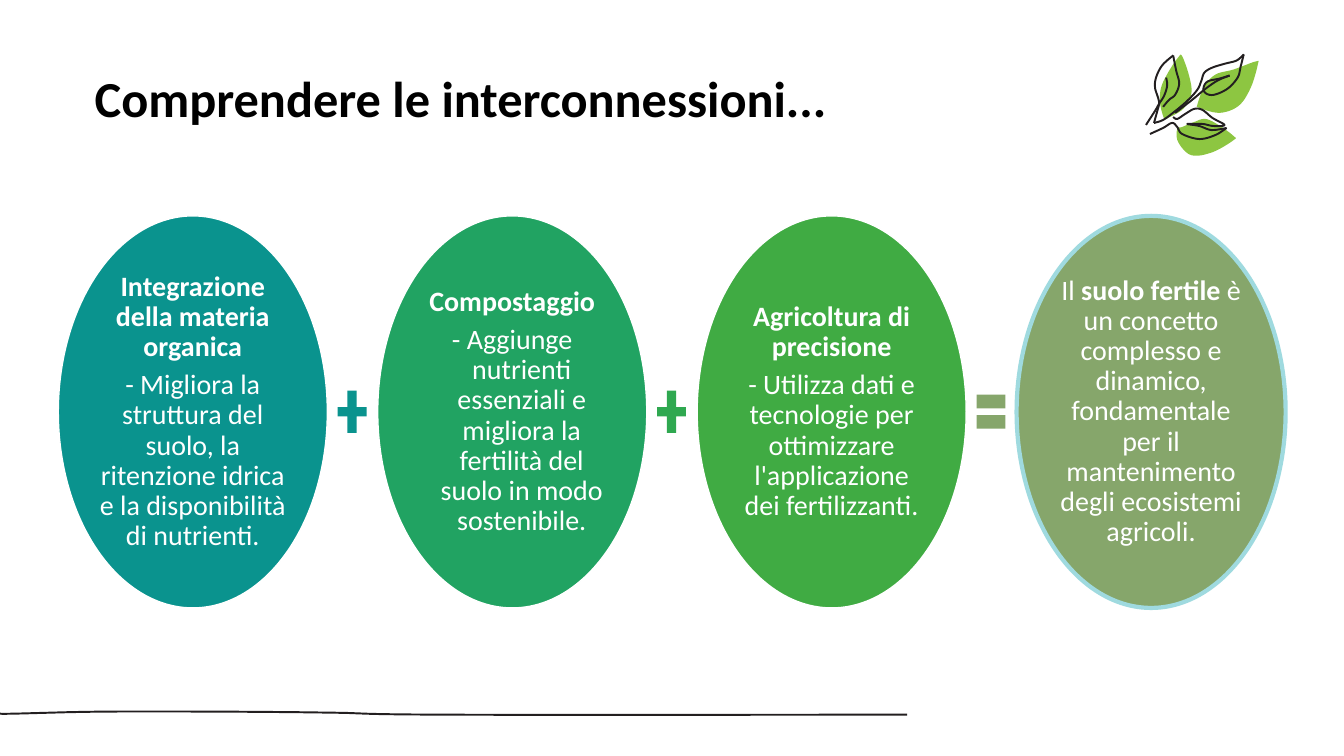
from pptx import Presentation
from pptx.dml.color import RGBColor
from pptx.enum.shapes import MSO_SHAPE as SHAPE
from pptx.enum.text import MSO_ANCHOR as ANCHOR, MSO_AUTO_SIZE as AUTO, PP_ALIGN as ALIGN
from pptx.util import Cm, Pt

WHITE = RGBColor(0xFF, 0xFF, 0xFF)
BLACK = RGBColor(0x00, 0x00, 0x00)
INK = RGBColor(0x23, 0x1F, 0x20)
LEAF = RGBColor(0x8D, 0xC6, 0x41)
TEAL = RGBColor(0x0A, 0x93, 0x8E)
EMERALD = RGBColor(0x21, 0xA3, 0x62)
PLUS_GREEN = RGBColor(0x2F, 0xA8, 0x50)
GREEN = RGBColor(0x40, 0xAB, 0x43)
OLIVE = RGBColor(0x86, 0xA6, 0x6B)
PALE_BLUE = RGBColor(0x9F, 0xDA, 0xDF)

FONT = "Calibri"
GRID = Cm(0.0254)  # drawing grid of the curves
STEPS = 6          # segments between two curve points


def smooth(pts, closed=False):
    """Points of a Catmull-Rom curve through pts."""
    ends = [pts[-1], *pts, pts[0], pts[1]] if closed else [pts[0], *pts, pts[-1]]
    curve = []
    for a, b, c, d in zip(ends, ends[1:], ends[2:], ends[3:]):
        for t in (k / STEPS for k in range(STEPS)):
            curve.append([GRID * (q + (r - p) * t / 2
                                  + (2 * p - 5 * q + 4 * r - s) * t ** 2 / 2
                                  + (3 * q - p - 3 * r + s) * t ** 3 / 2)
                          for p, q, r, s in zip(a, b, c, d)])
    if not closed:
        curve.append([GRID * v for v in pts[-1]])
    return curve


def draw_curve(pts, color, width=None):
    """A stroke when a width is given, otherwise a filled outline."""
    closed = width is None
    curve = smooth(pts, closed)
    fb = slide.shapes.build_freeform(*curve[0])
    fb.add_line_segments(curve[1:], close=closed)
    sp = fb.convert_to_shape()
    sp.shadow.inherit = False
    if closed:
        sp.fill.solid()
        sp.fill.fore_color.rgb = color
        sp.line.fill.background()
    else:
        sp.fill.background()
        sp.line.color.rgb = color
        sp.line.width = Pt(width)


prs = Presentation()
prs.slide_width, prs.slide_height = Cm(33.87), Cm(19.05)
slide = prs.slides.add_slide(prs.slide_layouts[5])

# Footer line
draw_curve([(0, 708), (14, 708), (100, 706), (223, 706), (330, 707),
            (443, 709), (900, 709)], INK, 1.4)

# Title
title = slide.shapes.title
title.left, title.top, title.width, title.height = Cm(2.13), Cm(1.57), Cm(21.21), Cm(1.8)
tf = title.text_frame
tf.text = "Comprendere le interconnessioni..."
tf.word_wrap = True
tf.auto_size = AUTO.SHAPE_TO_FIT_TEXT
tf.vertical_anchor = ANCHOR.TOP
p = tf.paragraphs[0]
p.alignment = ALIGN.LEFT
p.font.name, p.font.size, p.font.bold = FONT, Pt(36), True
p.font.color.rgb = BLACK

# Equation: each term is fill, outline, outline width, paragraphs of (text, bold) runs
terms = [
    (TEAL, WHITE, 1, [
        [("Integrazione della materia organica", True)],
        [("- Migliora la struttura del suolo, la ritenzione idrica e la "
          "disponibilità di nutrienti.", False)]]),
    (EMERALD, WHITE, 1, [
        [("Compostaggio", True)],
        [("- Aggiunge nutrienti essenziali e migliora la fertilità del suolo "
          "in modo sostenibile.", False)]]),
    (GREEN, WHITE, 1, [
        [("Agricoltura di precisione", True)],
        [("- Utilizza dati e tecnologie per ottimizzare l'applicazione dei "
          "fertilizzanti.", False)]]),
    (OLIVE, PALE_BLUE, 3, [
        [("Il ", False), ("suolo fertile", True),
         (" è un concetto complesso e dinamico, fondamentale per il "
          "mantenimento degli ecosistemi agricoli.", False)]]),
]
operators = [(SHAPE.MATH_PLUS, TEAL), (SHAPE.MATH_PLUS, PLUS_GREEN), (SHAPE.MATH_EQUAL, OLIVE)]
FIRST_LEFT, PITCH = 1.47, 8.05

for i, (fill, outline, width, paragraphs) in enumerate(terms):
    left = FIRST_LEFT + PITCH * i
    sp = slide.shapes.add_shape(SHAPE.OVAL, Cm(left), Cm(5.44), Cm(6.78), Cm(9.88))
    sp.shadow.inherit = False
    sp.fill.solid()
    sp.fill.fore_color.rgb = fill
    sp.line.color.rgb = outline
    sp.line.width = Pt(width)
    tf = sp.text_frame
    tf.word_wrap = True
    tf.vertical_anchor = ANCHOR.MIDDLE
    tf.margin_left = tf.margin_top = tf.margin_right = tf.margin_bottom = Cm(0.05)
    for j, runs in enumerate(paragraphs):
        p = tf.add_paragraph() if j else tf.paragraphs[0]
        p.alignment = ALIGN.CENTER
        p.line_spacing = 0.9
        if j:
            p.space_before = Pt(5.6)
            if fill == EMERALD:  # hanging indent
                p.level = 1
                pPr = p._p.get_or_add_pPr()
                pPr.set("marL", str(Cm(0.48)))
                pPr.set("indent", str(-Cm(0.48)))
        p.font.name, p.font.size = FONT, Pt(20)
        p.font.color.rgb = WHITE
        for text, bold in runs:
            r = p.add_run()
            r.text = text
            r.font.bold = bold

for i, (kind, color) in enumerate(operators):
    sp = slide.shapes.add_shape(kind, Cm(8.38 + PITCH * i), Cm(9.65), Cm(0.99), Cm(1.45))
    sp.shadow.inherit = False
    sp.adjustments[0] = 0.235
    sp.fill.solid()
    sp.fill.fore_color.rgb = color
    sp.line.fill.background()

# Leaf ornament: green leaves
leaves = [
    [(1159, 117), (1174, 108), (1182, 93), (1180, 76), (1173, 56), (1169, 57),
     (1159, 72), (1152, 87), (1151, 102), (1154, 115), (1156, 118)],
    [(1229, 105), (1241, 87), (1248, 64), (1246, 61), (1224, 69), (1206, 74),
     (1195, 86), (1188, 104), (1190, 107), (1210, 112)],
    [(1224, 139), (1224, 135), (1209, 124), (1196, 118), (1185, 121), (1173, 126),
     (1168, 128), (1169, 141), (1182, 154), (1203, 151)],
]
for pts in leaves:
    draw_curve(pts, LEAF)

# Leaf ornament: ink strokes
strokes = [
    # left leaf: outer edge, inner edge, vein
    [(1164, 55), (1153, 65), (1147, 77), (1146, 87), (1149, 97), (1150, 103),
     (1148, 111), (1145, 122)],
    [(1164, 55), (1167, 70), (1170, 83), (1166, 94), (1160, 99), (1154, 106)],
    [(1157, 77), (1158, 85), (1155, 95), (1150, 103), (1146, 110), (1137, 124)],
    # stem and right leaf: upper edge, lower edge, vein
    [(1145, 122), (1154, 119), (1165, 111), (1178, 100), (1188, 89), (1192, 80),
     (1195, 72), (1203, 67), (1216, 63), (1227, 60), (1234, 54)],
    [(1234, 54), (1231, 66), (1228, 77), (1218, 88), (1205, 94), (1197, 93),
     (1194, 88), (1198, 81), (1210, 78), (1220, 75)],
    [(1220, 75), (1208, 80), (1195, 89), (1183, 99), (1166, 112)],
    # lower leaf: upper edge with vein, lower edge
    [(1164, 116), (1168, 118), (1176, 113), (1185, 108), (1193, 109), (1203, 117),
     (1215, 124), (1204, 125), (1193, 123), (1178, 123), (1190, 125), (1202, 129),
     (1217, 127)],
    [(1217, 127), (1206, 134), (1190, 138), (1173, 133), (1168, 126), (1163, 122),
     (1154, 127), (1141, 133)],
]
for pts in strokes:
    draw_curve(pts, INK, 1.4)

prs.save("out.pptx")
